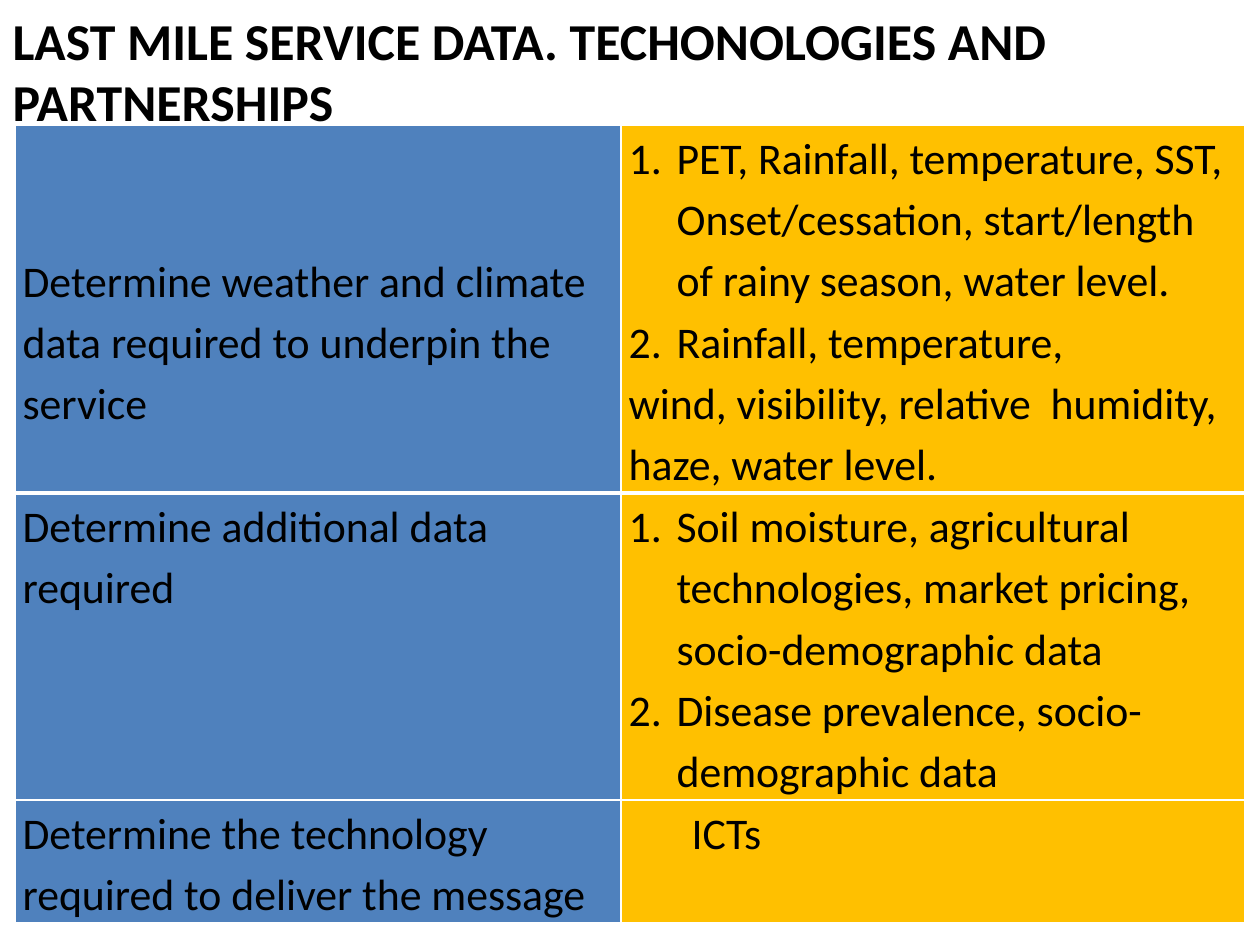
"""Build the slide on last mile service data, technologies and partnerships."""
import pptx
import pptx.util
import pptx.dml.color
import pptx.enum.text
import lxml.etree

Inches, Pt = pptx.util.Inches, pptx.util.Pt
RGB = pptx.dml.color.RGBColor
BLACK, WHITE = RGB(0, 0, 0), RGB(255, 255, 255)
BLUE, GOLD = RGB(0x4F, 0x81, 0xBD), RGB(0xFF, 0xC0, 0)
FONT = "Calibri"
NS = "http://schemas.openxmlformats.org/drawingml/2006/main"

TITLE = "LAST MILE SERVICE DATA. TECHONOLOGIES AND PARTNERSHIPS"
PLAIN, LIST, INSET = "plain", "list", "inset"
INDENT = {LIST: (0.38, -0.38), INSET: (0.5, 0)}
ROWS = [
    {"lines": 6, "skip": 2, "edge": 3, "cells": [
        [(PLAIN, "Determine weather and climate data required to underpin the service")],
        [(LIST, "PET, Rainfall, temperature, SST, Onset/cessation, start/length of rainy season, water level."),
         (LIST, "Rainfall, temperature,"),
         (PLAIN, "wind, visibility, relative  humidity, haze, water level.")]]},
    {"lines": 5, "skip": 0, "edge": 1, "cells": [
        [(PLAIN, "Determine additional data required")],
        [(LIST, "Soil moisture, agricultural technologies, market pricing, socio-demographic data"),
         (LIST, "Disease prevalence, socio-demographic data")]]},
    {"lines": 2, "skip": 0, "edge": 1, "cells": [
        [(PLAIN, "Determine the technology required to deliver the message")],
        [(INSET, "ICTs")]]},
]
COLS = [(4.81, BLUE), (4.95, GOLD)]
LEFT, TOP = 0.12, 0.99
SIZE, SPACE = 25, 1.15
LINE = SIZE * 1.22 * SPACE / 72


def style(par, size, bold):
    for run in par.runs:
        run.font.name, run.font.size = FONT, Pt(size)
        run.font.bold, run.font.color.rgb = bold, BLACK


def node(parent, tag, **attrs):
    return lxml.etree.SubElement(parent, f"{{{NS}}}{tag}", **attrs)


def border(cell, top, base):
    props = cell._tc.get_or_add_tcPr()
    for spot, (side, wide) in enumerate(zip("LRTB", (1, 1, top, base))):
        line = node(props, "ln" + side, w=str(Pt(wide)))
        node(node(line, "solidFill"), "srgbClr", val=str(WHITE))
        props.insert(spot, line)


def write(cell, items, skip):
    frame = cell.text_frame
    cell.margin_left = cell.margin_right = Inches(0.06)
    cell.margin_top, cell.margin_bottom = Inches(skip * LINE), 0
    frame.text = "\n".join(text for _, text in items)
    for par, (kind, _) in zip(frame.paragraphs, items):
        par.line_spacing = SPACE
        style(par, SIZE, False)
        if kind in INDENT:
            left, first = INDENT[kind]
            props = par._p.get_or_add_pPr()
            props.set("marL", str(Inches(left)))
            props.set("indent", str(Inches(first)))
            if kind == LIST:
                node(props, "buFont", typeface="+mj-lt")
                node(props, "buAutoNum", type="arabicPeriod")


def head(slide):
    title = slide.shapes.title
    title.left, title.top = 0, Inches(0.01)
    title.width, title.height = Inches(10), Inches(0.98)
    frame = title.text_frame
    frame.text = TITLE
    frame.word_wrap = True
    frame.auto_size = pptx.enum.text.MSO_AUTO_SIZE.NONE
    frame.vertical_anchor = pptx.enum.text.MSO_ANCHOR.TOP
    frame.margin_top, frame.margin_bottom = Inches(0.09), 0
    par = frame.paragraphs[0]
    par.alignment = pptx.enum.text.PP_ALIGN.LEFT
    par.line_spacing = 0.97
    style(par, 29.6, True)


def grid(slide):
    wide = sum(width for width, _ in COLS)
    high = LINE * sum(row["lines"] for row in ROWS)
    table = slide.shapes.add_table(
        len(ROWS), len(COLS), Inches(LEFT), Inches(TOP), Inches(wide), Inches(high)).table
    table.first_row = table.horz_banding = False
    for col, (width, _) in zip(table.columns, COLS):
        col.width = Inches(width)
    edge = 1
    for r, row in enumerate(ROWS):
        table.rows[r].height = Inches(row["lines"] * LINE)
        for c, (items, (_, fill)) in enumerate(zip(row["cells"], COLS)):
            cell = table.cell(r, c)
            write(cell, items, 0 if c else row["skip"])
            cell.fill.solid()
            cell.fill.fore_color.rgb = fill
            border(cell, edge, row["edge"])
        edge = row["edge"]


def main():
    deck = pptx.Presentation()
    deck.slide_width, deck.slide_height = Inches(10), Inches(7.5)
    slide = deck.slides.add_slide(deck.slide_layouts[5])
    head(slide)
    grid(slide)
    deck.save("out.pptx")


if __name__ == "__main__":
    main()
